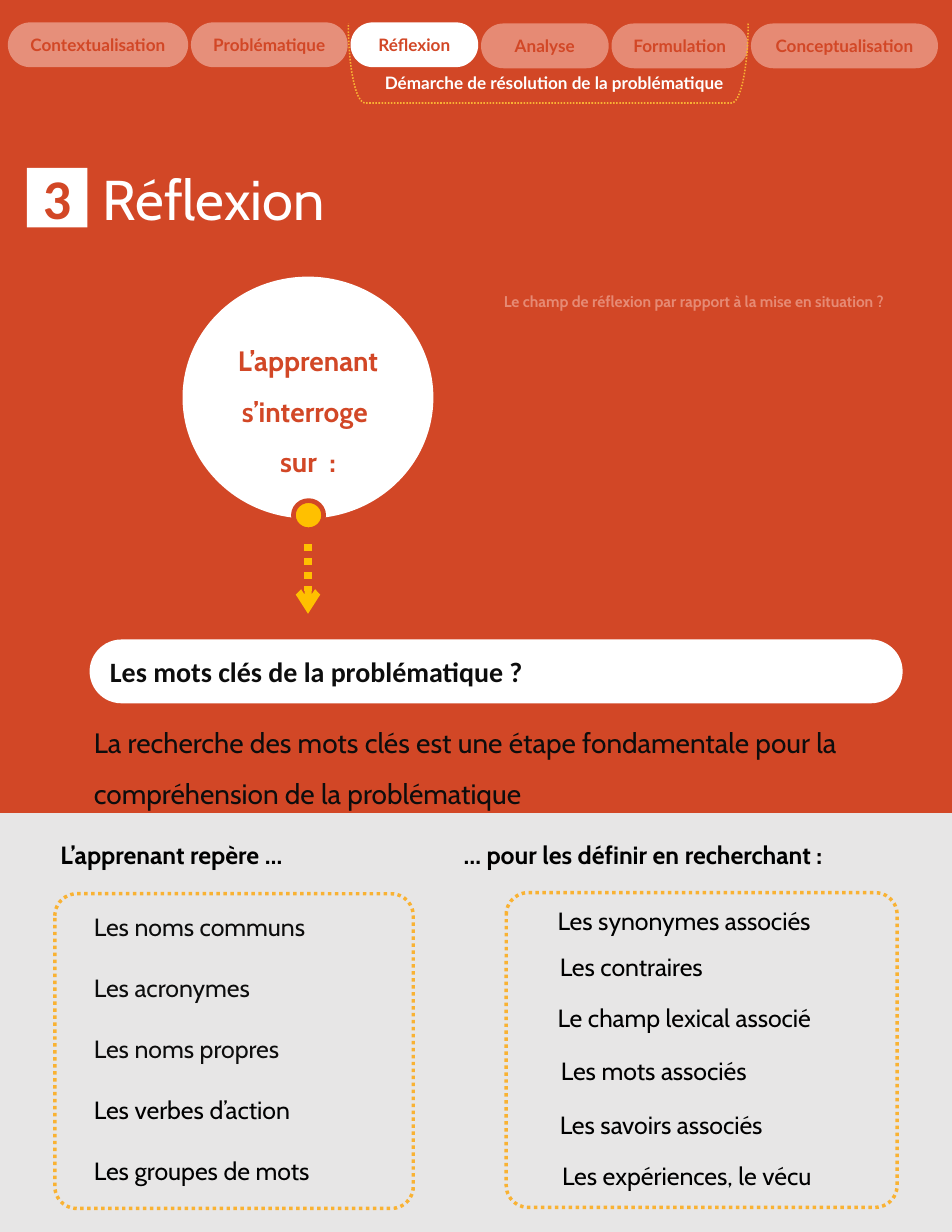
from lxml.etree import SubElement
from pptx import Presentation
from pptx.dml.color import RGBColor
from pptx.enum.dml import MSO_LINE
from pptx.enum.shapes import MSO_CONNECTOR, MSO_SHAPE
from pptx.enum.text import MSO_ANCHOR, MSO_AUTO_SIZE, PP_ALIGN
from pptx.oxml.ns import qn
from pptx.util import Inches, Pt

ORANGE, WHITE, BLACK, INK = "D24726", "FFFFFF", "000000", "0D0D0D"
GREY, GOLD, AMBER = "E7E6E6", "FFC000", "F9B233"
SALMON, PALE_SALMON = "E68A74", "E68F7A"
CENTER, JUSTIFY = PP_ALIGN.CENTER, PP_ALIGN.JUSTIFY


def color(value):
    return RGBColor.from_string(value)


class Page:
    """Style and current slide, measured on a grid of 85 columns by 110 rows."""

    def __init__(self, deck, background):
        self.column = deck.slide_width / 85
        self.row = deck.slide_height / 110
        self.slide = deck.slides.add_slide(deck.slide_layouts[6])
        self.slide.background.fill.solid()
        self.slide.background.fill.fore_color.rgb = color(background)

    def place(self, left, top, width, height):
        return (round(left * self.column), round(top * self.row),
                round(width * self.column), round(height * self.row))

    def outline(self, line, value, weight, dotted):
        line.color.rgb = color(value)
        line.width = Pt(weight)
        if dotted:
            line.dash_style = MSO_LINE.ROUND_DOT

    def shape(self, preset, box, fill=None, line=None, weight=1, dotted=False, corner=None):
        shape = self.slide.shapes.add_shape(preset, *self.place(*box))
        shape.shadow.inherit = False
        if corner is not None:
            shape.adjustments[0] = corner
        if fill:
            shape.fill.solid()
            shape.fill.fore_color.rgb = color(fill)
        else:
            shape.fill.background()
        if line:
            self.outline(shape.line, line, weight, dotted)
        else:
            shape.line.fill.background()
        return shape

    def fill_text(self, frame, lines, size, ink, font, bold, align, spacing):
        frame.word_wrap = True
        for index, words in enumerate(lines):
            paragraph = frame.add_paragraph() if index else frame.paragraphs[0]
            paragraph.alignment = align
            paragraph.line_spacing = spacing
            run = paragraph.add_run()
            run.text = words
            run.font.name, run.font.size, run.font.bold = font, Pt(size), bold
            run.font.color.rgb = color(ink)

    def text(self, box, *lines, size=16, ink=BLACK, font="Cabin", bold=False,
             align=None, spacing=None):
        frame = self.slide.shapes.add_textbox(*self.place(*box)).text_frame
        self.fill_text(frame, lines, size, ink, font, bold, align, spacing)
        frame.auto_size = MSO_AUTO_SIZE.SHAPE_TO_FIT_TEXT

    def pill(self, box, words, fill, size, ink, font, align):
        frame = self.shape(MSO_SHAPE.ROUNDED_RECTANGLE, box, fill, corner=0.5).text_frame
        frame.vertical_anchor = MSO_ANCHOR.MIDDLE
        self.fill_text(frame, [words], size, ink, font, True, align, None)

    def arrow(self, left, top, bottom, value, weight):
        x, start, _, length = self.place(left, top, 0, bottom - top)
        arrow = self.slide.shapes.add_connector(MSO_CONNECTOR.STRAIGHT, x, start, x, start + length)
        self.outline(arrow.line, value, weight, True)
        properties = arrow._element.spPr
        SubElement(properties.find(qn("a:ln")), qn("a:tailEnd"), type="arrow")
        SubElement(properties, qn("a:effectLst"))


def build_navigation(page):
    steps = [("Contextualisation", 16.1, 2, PALE_SALMON), ("Problématique", 14, 2, PALE_SALMON),
             ("Réflexion", 11.4, 2, WHITE), ("Analyse", 11.4, 2.1, SALMON),
             ("Formulation", 12.2, 2.1, SALMON), ("Conceptualisation", 16.7, 2.1, SALMON)]
    left, gap = 0.7, 0.25
    for step, width, top, fill in steps:
        page.pill((left, top, width, 4), step, fill, 11, ORANGE, "Lato", CENTER)
        left += width + gap
    page.text((30.8, 6, 37.4, 2.9), "Démarche de résolution de la problématique",
              size=11, ink=WHITE, font="Lato", bold=True, align=CENTER)
    bracket = page.shape(MSO_SHAPE.RIGHT_BRACKET, (45.4, -12.2, 7.1, 35.7),
                         line=AMBER, dotted=True, corner=0.21)
    bracket.rotation = 90


def build_question(page):
    page.text((8.2, 14.2, 65.8, 7.1), "Réflexion", size=36, ink=WHITE)
    page.shape(MSO_SHAPE.RECTANGLE, (2.4, 15, 5.4, 5.3), WHITE)
    page.text((2, 14.1, 6.2, 7.1), "3", size=36, ink=ORANGE, font="Calibri",
              bold=True, align=CENTER)
    page.arrow(27.5, 48.6, 54.8, GOLD, 4.5)
    page.shape(MSO_SHAPE.OVAL, (16.3, 24.7, 22.4, 21.6), WHITE)
    page.text((16.1, 28.7, 22.8, 14.6), "L’apprenant s’interroge ", "sur  :",
              size=18, ink=ORANGE, bold=True, align=CENTER, spacing=1.5)
    page.shape(MSO_SHAPE.OVAL, (26.2, 44.7, 2.7, 2.6), GOLD, ORANGE, 3)
    page.text((44, 24.7, 41, 3.5), "Le champ de réflexion par rapport à la mise en situation ?",
              size=10, ink=SALMON, bold=True, align=JUSTIFY, spacing=1.5)
    page.pill((8, 57.1, 72.6, 5.7), "Les mots clés de la problématique ?",
              WHITE, 18, INK, "Calibri", JUSTIFY)
    page.text((7.4, 62.8, 75.2, 9.5), "La recherche des mots clés est une étape fondamentale "
              "pour la compréhension de la problématique", size=18, ink=INK, spacing=1.5)


def build_keywords(page):
    page.text((4.4, 74.5, 30.7, 3.7), "L’apprenant repère …", bold=True)
    page.text((40.4, 74.5, 39.1, 3.7), "… pour les définir en recherchant :", bold=True)
    clues = [("Les noms communs", INK), ("Les acronymes", INK), ("Les noms propres", INK),
             ("Les verbes d’action", BLACK), ("Les groupes de mots", BLACK)]
    for index, (clue, ink) in enumerate(clues):
        page.text((7.4, 80.9 + 5.45 * index, 26.6, 3.7), clue, ink=ink)
    searches = [("Les synonymes associés", 48.8, 80.4), ("Les contraires", 49, 84.5),
                ("Le champ lexical associé", 48.8, 89), ("Les mots associés", 49.1, 93.8),
                ("Les savoirs associés", 49, 98.6), ("Les expériences, le vécu", 49.2, 103.1)]
    for search, left, top in searches:
        page.text((left, top, 32, 3.7), search)
    for box in [(45.2, 79.7, 34.9, 28.1), (4.9, 79.8, 32, 28.1)]:
        page.shape(MSO_SHAPE.ROUNDED_RECTANGLE, box, line=AMBER, weight=2.25,
                   dotted=True, corner=0.07)


def main():
    deck = Presentation()
    deck.slide_width, deck.slide_height = Inches(8.5), Inches(11)
    page = Page(deck, ORANGE)
    page.shape(MSO_SHAPE.RECTANGLE, (-0.8, 72.6, 90.2, 38.4), GREY)
    build_question(page)
    build_navigation(page)
    build_keywords(page)
    deck.save("out.pptx")


if __name__ == "__main__":
    main()
